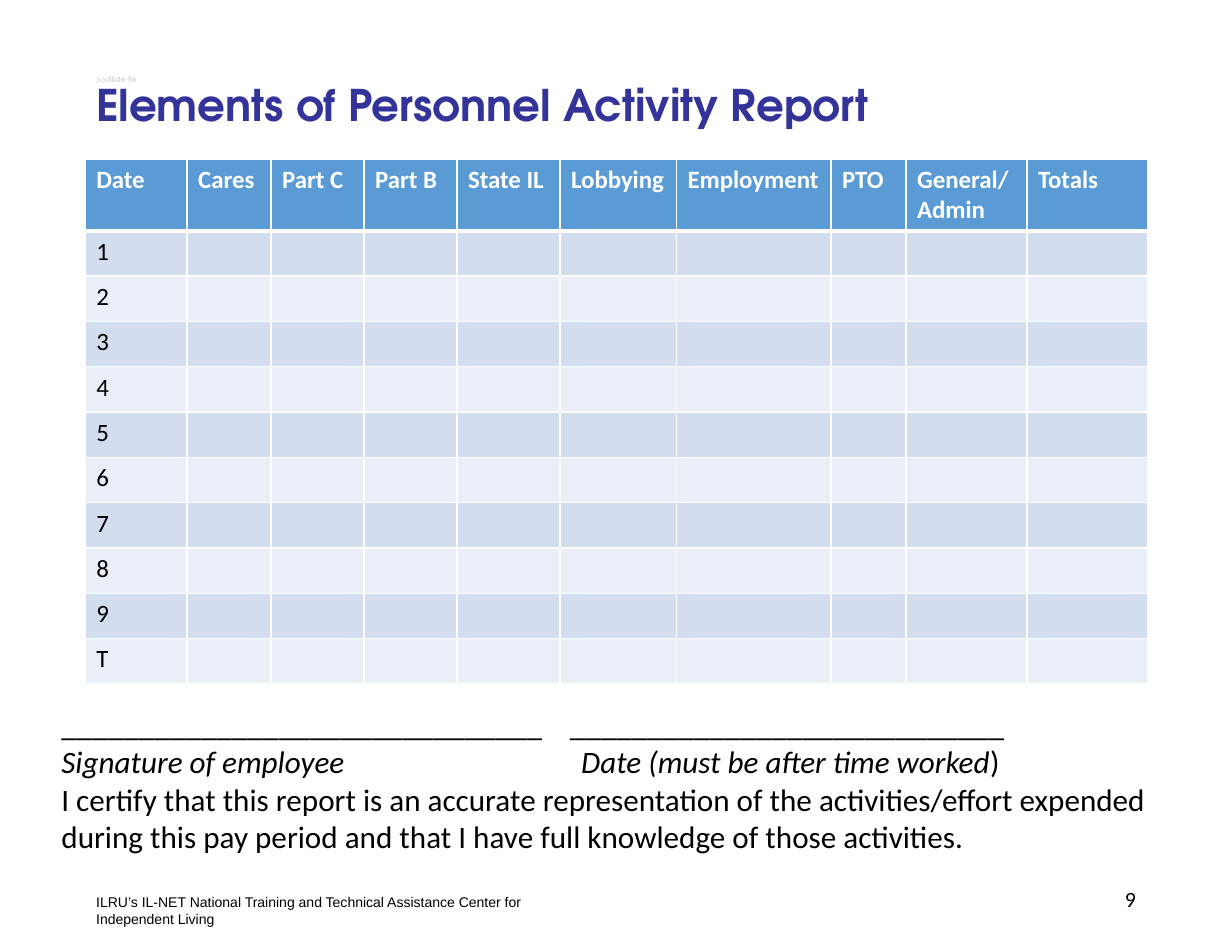
from dataclasses import dataclass

from lxml.etree import SubElement
from pptx import Presentation
from pptx.dml.color import RGBColor
from pptx.enum.text import MSO_ANCHOR as Anchor, PP_ALIGN as Align
from pptx.oxml.ns import qn
from pptx.util import Inches, Pt

"""Builds the personnel activity report slide."""

BLACK = RGBColor(0x00, 0x00, 0x00)
WHITE = RGBColor(0xFF, 0xFF, 0xFF)
NAVY = RGBColor(0x33, 0x33, 0x99)
GREY = RGBColor(0xD9, 0xD9, 0xD9)
HEADER = RGBColor(0x5B, 0x9B, 0xD5)
BANDS = (RGBColor(0xEA, 0xEF, 0xF7), RGBColor(0xD2, 0xDE, 0xEF))

TABLE_BOX = (0.76, 1.42, 9.49, 4.69)
HEADER_HEIGHT = 0.64


@dataclass(frozen=True)
class Column:
    label: str
    width: float


@dataclass(frozen=True)
class Style:
    size: float
    font: str = "Calibri"
    color: RGBColor = BLACK
    bold: bool = False
    italic: bool = False


COLUMNS = (
    Column("Date", 0.91), Column("Cares", 0.75), Column("Part C", 0.83),
    Column("Part B", 0.83), Column("State IL", 0.92), Column("Lobbying", 1.04),
    Column("Employment", 1.38), Column("PTO", 0.67),
    Column("General/Admin", 1.08), Column("Totals", 1.08),
)
DAYS = "123456789T"

TITLE = Style(28, "TeX Gyre Adventor", NAVY, bold=True)
MARKER = Style(5, "TeX Gyre Adventor", GREY, bold=True)
HEAD = Style(16, color=WHITE, bold=True)
BODY = Style(16)
CERTIFY = Style(20)
SIGNED = Style(20, italic=True)
FOOTER = Style(9, "Arial")
NUMBER = Style(14)


def add_run(p, text: str, style: Style) -> None:
    r = p.add_run()
    r.text = text
    r.font.size = Pt(style.size)
    r.font.name = style.font
    r.font.color.rgb = style.color
    r.font.bold = style.bold
    r.font.italic = style.italic


def add_box(s, left: float, top: float, width: float, height: float,
            anchor: Anchor = Anchor.TOP):
    sp = s.shapes.add_textbox(Inches(left), Inches(top), Inches(width), Inches(height))
    tf = sp.text_frame
    tf.word_wrap = True
    tf.vertical_anchor = anchor
    return tf


def add_tab_stop(p, position: float) -> None:
    tabs = SubElement(p._p.get_or_add_pPr(), qn("a:tabLst"))
    SubElement(tabs, qn("a:tab"), pos=str(Inches(position)), algn="l")


def add_border(cell, side: str, width: float) -> None:
    ln = SubElement(cell._tc.get_or_add_tcPr(), qn(f"a:ln{side}"), w=str(Pt(width)))
    fill = SubElement(ln, qn("a:solidFill"))
    SubElement(fill, qn("a:srgbClr"), val=str(WHITE))


def style_cell(cell, row: int) -> None:
    widths = {"L": 1, "R": 1, "T": 3 if row == 1 else 1, "B": 3 if row == 0 else 1}
    for side, width in widths.items():
        add_border(cell, side, width)
    cell.fill.solid()
    cell.fill.fore_color.rgb = BANDS[row % 2] if row else HEADER


def add_activity_table(s) -> None:
    frame = s.shapes.add_table(len(DAYS) + 1, len(COLUMNS), *map(Inches, TABLE_BOX))
    table = frame.table
    for column, item in zip(table.columns, COLUMNS):
        column.width = Inches(item.width)
    day_height = (TABLE_BOX[3] - HEADER_HEIGHT) / len(DAYS)
    for i, row in enumerate(table.rows):
        row.height = Inches(day_height if i else HEADER_HEIGHT)
        for cell in row.cells:
            style_cell(cell, i)
    for j, item in enumerate(COLUMNS):
        add_run(table.cell(0, j).text_frame.paragraphs[0], item.label, HEAD)
    for i, day in enumerate(DAYS, 1):
        add_run(table.cell(i, 0).text_frame.paragraphs[0], day, BODY)


def add_title(s) -> None:
    p = add_box(s, 0.76, 0.42, 9.83, 1, Anchor.MIDDLE).paragraphs[0]
    p.line_spacing = 0.9
    add_run(p, ">>Slide 96", MARKER)
    p.add_line_break()
    SubElement(p._p[-1], qn("a:rPr"), sz=str(MARKER.size * 100))
    add_run(p, "Elements of Personnel Activity Report", TITLE)


def add_signature(s) -> None:
    tf = add_box(s, 0.45, 6.25, 9.89, 1.45)
    p = tf.paragraphs[0]
    add_tab_stop(p, 4.54)
    add_run(p, "_" * 31 + "\t" + "_" * 28, CERTIFY)
    p = tf.add_paragraph()
    add_tab_stop(p, 4.64)
    add_run(p, "Signature of employee\tDate (must be after time worked", SIGNED)
    add_run(p, ")", CERTIFY)
    add_run(tf.add_paragraph(),
            "I certify that this report is an accurate representation of the "
            "activities/effort expended during this pay period and that I have "
            "full knowledge of those activities.", CERTIFY)


def add_footer(s) -> None:
    p = add_box(s, 0.76, 7.93, 4.49, 0.4).paragraphs[0]
    add_run(p, "ILRU’s IL-NET National Training and Technical Assistance "
               "Center for Independent Living", FOOTER)
    p = add_box(s, 7.77, 7.8, 2.47, 0.45, Anchor.MIDDLE).paragraphs[0]
    p.alignment = Align.RIGHT
    add_run(p, "9", NUMBER)


def main() -> None:
    prs = Presentation()
    prs.slide_width, prs.slide_height = Inches(11), Inches(8.5)
    s = prs.slides.add_slide(prs.slide_layouts[6])
    add_title(s)
    add_activity_table(s)
    add_footer(s)
    add_signature(s)
    prs.save("out.pptx")


if __name__ == "__main__":
    main()
